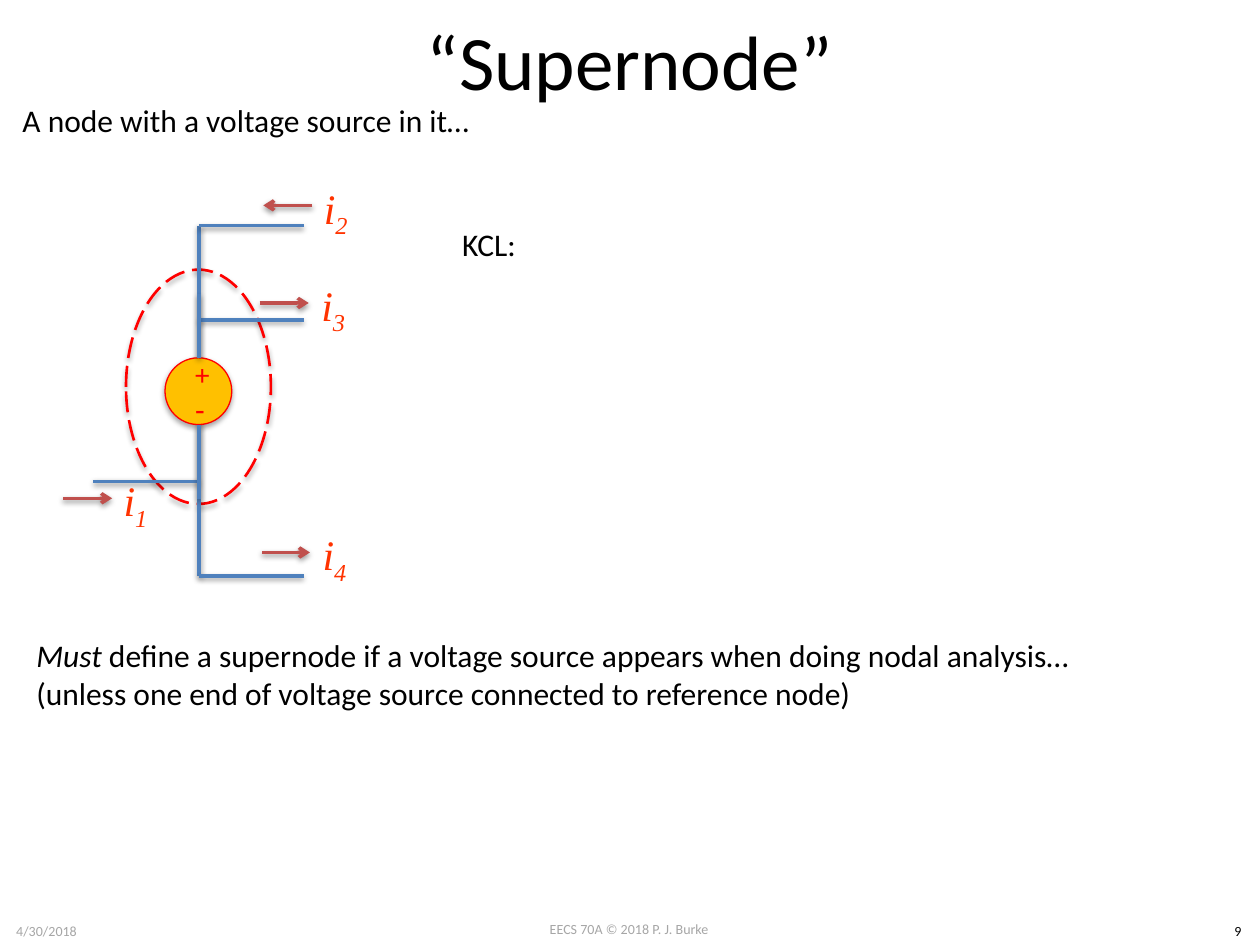
"""Build the supernode slide: a circuit with a voltage source and its branch currents."""
import lxml.etree
import pptx
import pptx.dml.color
import pptx.enum.dml
import pptx.enum.shapes
import pptx.enum.text
import pptx.oxml
import pptx.util

NS = "http://schemas.openxmlformats.org/drawingml/2006/main"
rgb = pptx.dml.color.RGBColor.from_string
MIDDLE = pptx.enum.text.MSO_ANCHOR.MIDDLE
TOP = pptx.enum.text.MSO_ANCHOR.TOP
CENTER = pptx.enum.text.PP_ALIGN.CENTER
LEFT = pptx.enum.text.PP_ALIGN.LEFT
OVAL = pptx.enum.shapes.MSO_SHAPE.OVAL
STRAIGHT = pptx.enum.shapes.MSO_CONNECTOR.STRAIGHT


def write(p, text, size=18, font="Calibri", color="000000", align=LEFT, italic=False, baseline=0):
    """Add one formatted run to a paragraph."""
    p.alignment = align
    r = p.add_run()
    r.text = text
    r.font.size = pptx.util.Pt(size)
    r.font.name = font
    r.font.italic = italic
    r.font.color.rgb = rgb(color)
    if baseline:
        r.font._element.set("baseline", str(baseline * 1000))


def outline(sp, color, width, alpha, dist, arrow=False):
    """Set a line, an optional arrowhead and a soft shadow below."""
    sp.line.color.rgb = rgb(color)
    sp.line.width = pptx.util.Pt(width)
    if arrow:
        lxml.etree.SubElement(sp.line._get_or_add_ln(), f"{{{NS}}}tailEnd", type="arrow")
    sp._element.spPr.append(pptx.oxml.parse_xml(
        f'<a:effectLst xmlns:a="{NS}"><a:outerShdw blurRad="{pptx.util.Pt(3.1)}" '
        f'dist="{pptx.util.Pt(dist)}" dir="5400000" rotWithShape="0"><a:srgbClr val="000000">'
        f'<a:alpha val="{alpha * 1000}"/></a:srgbClr></a:outerShdw></a:effectLst>'))


prs = pptx.Presentation()
prs.slide_width = pptx.util.Inches(10)
prs.slide_height = pptx.util.Inches(7.5)
col = prs.slide_width / 100
row = prs.slide_height / 75
s = prs.slides.add_slide(prs.slide_layouts[5])

title = s.shapes.title
title.left, title.top, title.width, title.height = 5 * int(col), 0, 90 * int(col), int(9.5 * row)
title.text_frame.vertical_anchor = MIDDLE
write(title.text_frame.paragraphs[0], "“Supernode”", size=44, align=CENTER)

wire_x, right_x = 15.8, 24.1
wires = [
    (wire_x, 45.7, wire_x, 17.9),
    (wire_x, 17.9, right_x, 17.9),
    (wire_x, 25.4, right_x, 25.4),
    (7.4, 38.2, wire_x, 38.2),
    (wire_x, 45.7, right_x, 45.7),
]
leads = [(wire_x, 39.6, wire_x, 33.7), (wire_x, 28.4, wire_x, 23.3)]
arrows = [
    (24.8, 16.3, 20.9, 16.3),
    (20.6, 24.05, 24.5, 24.05),
    (5, 39.55, 8.9, 39.55),
    (20.8, 43.85, 24.6, 43.85),
]
ovals = [
    (10, 21.4, 11.5, 18.6, None, 1.5, wires),
    (13.1, 28.4, 5.3, 5.3, "FFC000", 0.75, leads),
]
for x, y, w, h, fill, width, lines in ovals:
    sp = s.shapes.add_shape(OVAL, int(x * col), int(y * row), int(w * col), int(h * row))
    if fill:
        sp.fill.solid()
        sp.fill.fore_color.rgb = rgb(fill)
    else:
        sp.fill.background()
        sp.line.dash_style = pptx.enum.dml.MSO_LINE.LONG_DASH
    outline(sp, "FF0000", width, alpha=35, dist=1.8)
    for x1, y1, x2, y2 in lines:
        wire = s.shapes.add_connector(STRAIGHT, int(x1 * col), int(y1 * row), int(x2 * col), int(y2 * row))
        outline(wire, "4F81BD", 2, alpha=38, dist=1.6)

for x1, y1, x2, y2 in arrows:
    arrow = s.shapes.add_connector(STRAIGHT, int(x1 * col), int(y1 * row), int(x2 * col), int(y2 * row))
    outline(arrow, "C0504D", 2, alpha=38, dist=1.6, arrow=True)

grey = dict(size=8, color="A6A6A6", align=CENTER)
current = dict(size=24, font="Times New Roman", color="FF3300", align=CENTER, italic=True)
sign = dict(color="FF0000", align=CENTER)
labels = [
    (38.3, 72.6, 23.3, 2.4, TOP, [[("EECS 70A © 2018 P. J. Burke", grey)]]),
    (0, 72.7, 7.4, 2.4, TOP, [[("4/30/2018", grey)]]),
    (96.5, 72.7, 3.5, 2.4, TOP, [[("9", dict(size=8, align=CENTER))]]),
    (0.8, 7.5, 38.1, 4, TOP, [[("A node with a voltage source in it…", {})]]),
    (35.7, 17.4, 6.3, 4, TOP, [[("KCL:", {})]]),
    (1.9, 50, 85, 7.1, TOP, [
        [("Must", dict(italic=True)),
         (" define a supernode if a voltage source appears when doing nodal analysis…", {})],
        [("(unless one end of voltage source connected to reference node)", {})]]),
    (14.5, 28, 2.6, 3.3, MIDDLE, [[("+", dict(sign, size=16.6))]]),
    (14.5, 30.8, 2.6, 3.3, MIDDLE, [[("-", sign)]]),
]
for number, x, y in [("2", 22.8, 13.7), ("3", 22.6, 21.4), ("1", 6.9, 36.9), ("4", 22.7, 41.2)]:
    labels.append((x, y, 7.7, 6.1, MIDDLE, [[("i", current), (number, dict(current, baseline=-25))]]))

for x, y, w, h, anchor, paragraphs in labels:
    tf = s.shapes.add_textbox(int(x * col), int(y * row), int(w * col), int(h * row)).text_frame
    tf.word_wrap = anchor == MIDDLE
    tf.vertical_anchor = anchor
    for i, runs in enumerate(paragraphs):
        p = tf.add_paragraph() if i else tf.paragraphs[0]
        for text, style in runs:
            write(p, text, **style)

prs.save("out.pptx")
